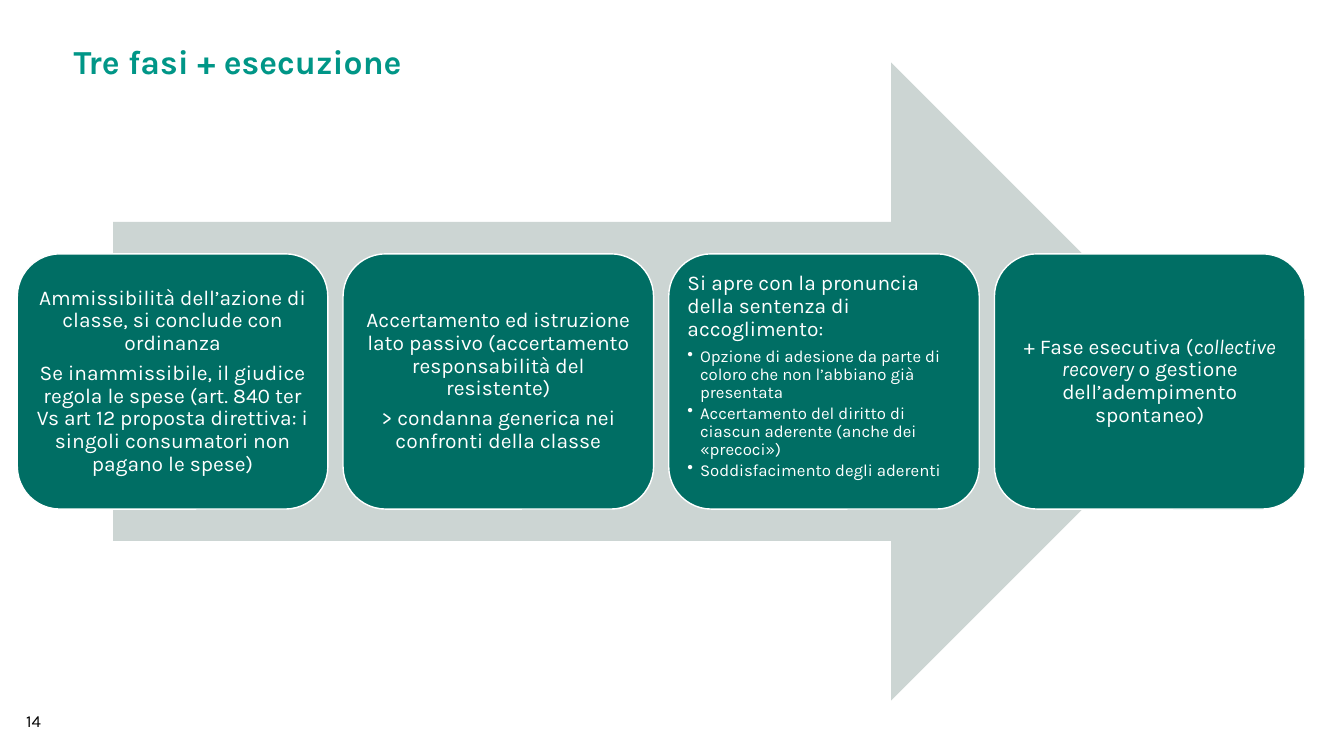
from dataclasses import dataclass

from lxml.etree import SubElement
from pptx import Presentation
from pptx.dml.color import RGBColor
from pptx.enum.shapes import MSO_SHAPE as Shape
from pptx.enum.text import MSO_ANCHOR as Anchor, MSO_AUTO_SIZE as AutoSize, PP_ALIGN as Align
from pptx.oxml.ns import qn
from pptx.util import Pt


@dataclass(frozen=True)
class Theme:
    font: str = "Karla"
    title: RGBColor = RGBColor(0x00, 0x96, 0x87)
    card: RGBColor = RGBColor(0x00, 0x6E, 0x64)
    arrow: RGBColor = RGBColor(0xCC, 0xD5, 0xD3)
    white: RGBColor = RGBColor(0xFF, 0xFF, 0xFF)
    ink: RGBColor = RGBColor(0x01, 0x00, 0x00)
    title_size: int = 24
    body_size: int = 15
    small_size: int = 12


THEME = Theme()

# Each phase: paragraphs, then bullets; *text* is italic
PHASES = [
    (["Ammissibilità dell’azione di classe, si conclude con ordinanza",
      "Se inammissibile, il giudice regola le spese (art. 840 ter Vs art 12 proposta "
      "direttiva: i singoli consumatori non pagano le spese)"], []),
    (["Accertamento ed istruzione lato passivo (accertamento responsabilità del resistente)",
      "> condanna generica nei confronti della classe"], []),
    (["Si apre con la pronuncia della sentenza di accoglimento:"],
     ["Opzione di adesione da parte di coloro che non l’abbiano già presentata",
      "Accertamento del diritto di ciascun aderente (anche dei «precoci»)",
      "Soddisfacimento degli aderenti"]),
    (["+ Fase esecutiva (*collective recovery *o gestione dell’adempimento spontaneo)"], []),
]


def style(font, size, color, bold=None):
    font.name, font.size, font.bold = THEME.font, Pt(size), bold
    font.color.rgb = color


def add_bullet(p, indent):
    pPr = p._p.get_or_add_pPr()
    pPr.set("marL", str(Pt(indent)))
    pPr.set("indent", str(-Pt(indent)))
    SubElement(pPr, qn("a:buChar")).set("char", "•")


def add_title(s, text, x, y, w, h):
    sp = s.shapes.title
    sp.left, sp.top, sp.width, sp.height = Pt(x), Pt(y), Pt(w), Pt(h)
    tf = sp.text_frame
    tf.text = text
    tf.auto_size = AutoSize.NONE
    tf.vertical_anchor = Anchor.TOP
    p = tf.paragraphs[0]
    p.alignment, p.line_spacing = Align.LEFT, 0.9
    style(p.runs[0].font, THEME.title_size, THEME.title, True)


def add_block(s, kind, fill, x, y, w, h):
    sp = s.shapes.add_shape(kind, Pt(x), Pt(y), Pt(w), Pt(h))
    sp.shadow.inherit = False
    sp.fill.solid()
    sp.fill.fore_color.rgb = fill
    sp.line.fill.background()
    return sp


def add_card(s, paragraphs, bullets, x, y, w, h):
    sp = add_block(s, Shape.ROUNDED_RECTANGLE, THEME.card, x, y, w, h)
    sp.line.color.rgb, sp.line.width = THEME.white, Pt(1)
    tf = sp.text_frame
    tf.word_wrap = True
    tf.margin_left = tf.margin_right = tf.margin_top = tf.margin_bottom = Pt(4.5)
    tf.vertical_anchor = Anchor.TOP if bullets else Anchor.MIDDLE
    for i, text in enumerate(paragraphs + bullets):
        p = tf.paragraphs[0] if i == 0 else tf.add_paragraph()
        is_bullet = i >= len(paragraphs)
        size = THEME.small_size if is_bullet else THEME.body_size
        p.alignment = Align.LEFT if bullets else Align.CENTER
        p.line_spacing = 0.9
        p.space_after = Pt(size * (0.15 if is_bullet else 0.35))
        if is_bullet:
            add_bullet(p, 9)
        for j, part in enumerate(text.split("*")):
            r = p.add_run()
            r.text = part
            style(r.font, size, THEME.white)
            r.font.italic = j % 2 == 1


def add_process(s, phases, x, y, w, h):
    # Arrow behind the cards
    add_block(s, Shape.RIGHT_ARROW, THEME.arrow, x + 68.5, y, 783.5, h)
    # Equal cards, centred on the arrow
    gap, card_h = 10.8, 0.4 * h
    card_w = (w - gap * (len(phases) - 1)) / len(phases)
    for i, (paragraphs, bullets) in enumerate(phases):
        add_card(s, paragraphs, bullets, x + i * (card_w + gap), y + (h - card_h) / 2,
                 card_w, card_h)


def add_page_number(s, text, x, y, w, h):
    tf = s.shapes.add_textbox(Pt(x), Pt(y), Pt(w), Pt(h)).text_frame
    tf.word_wrap = True
    tf.vertical_anchor = Anchor.MIDDLE
    tf.text = text
    style(tf.paragraphs[0].runs[0].font, THEME.small_size, THEME.ink)


def main():
    prs = Presentation()
    prs.slide_width, prs.slide_height = Pt(960), Pt(540)
    s = prs.slides.add_slide(prs.slide_layouts[5])
    add_title(s, "Tre fasi + esecuzione", 45.4, 28.8, 862, 65.5)
    add_process(s, PHASES, 12.4, 44.6, 919.8, 455.8)
    add_page_number(s, "14", 11.5, 500.4, 34, 28.8)
    prs.save("out.pptx")


if __name__ == "__main__":
    main()
